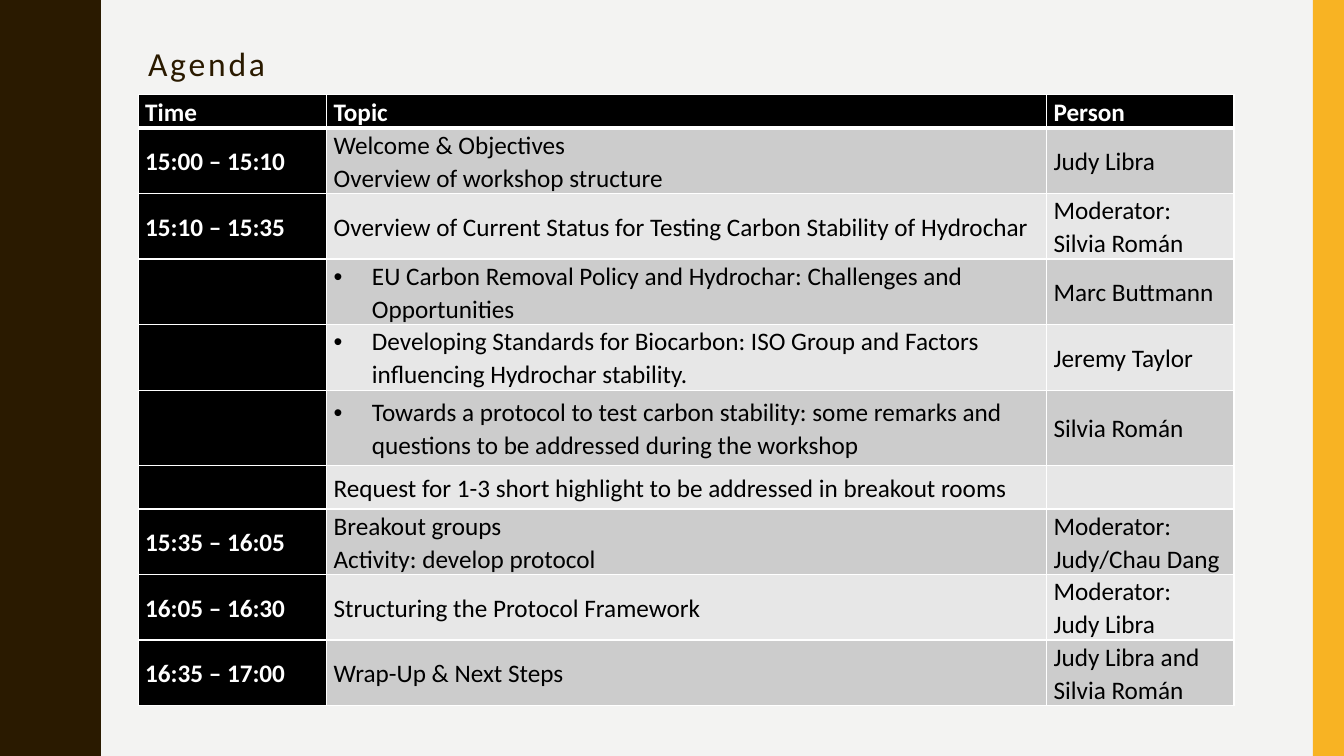
from dataclasses import dataclass

from lxml.etree import SubElement
from pptx import Presentation
from pptx.dml.color import RGBColor
from pptx.enum.shapes import MSO_SHAPE
from pptx.enum.text import MSO_ANCHOR
from pptx.oxml.ns import qn
from pptx.util import Inches, Pt

BROWN = RGBColor(0x2A, 0x1A, 0x00)
AMBER = RGBColor(0xF8, 0xB3, 0x23)
PAPER = RGBColor(0xF3, 0xF3, 0xF2)
BLACK = RGBColor(0x00, 0x00, 0x00)
WHITE = RGBColor(0xFF, 0xFF, 0xFF)
BANDS = (RGBColor(0xCC, 0xCC, 0xCC), RGBColor(0xE7, 0xE7, 0xE7))
FONT = "Calibri"
HEIGHT = 7.5
WAVE = 1.5  # length of one wave of the left edge
COLUMNS = (1.87, 7.14, 1.86)


@dataclass(frozen=True)
class AgendaRow:
    time: str
    topic: str
    person: str
    height: float = 0.65
    bullet: bool = False


AGENDA = (
    AgendaRow("Time", "Topic", "Person", 0.33),
    AgendaRow("15:00 – 15:10", "Welcome & Objectives\nOverview of workshop structure",
              "Judy Libra"),
    AgendaRow("15:10 – 15:35",
              "Overview of Current Status for Testing Carbon Stability of Hydrochar",
              "Moderator:\nSilvia Román"),
    AgendaRow("", "EU Carbon Removal Policy and Hydrochar: Challenges and Opportunities",
              "Marc Buttmann", bullet=True),
    AgendaRow("", "Developing Standards for Biocarbon: ISO Group and Factors "
              "influencing Hydrochar stability.", "Jeremy Taylor", bullet=True),
    AgendaRow("", "Towards a protocol to test carbon stability: some remarks and "
              "questions to be addressed during the workshop",
              "Silvia Román", 0.75, True),
    AgendaRow("", "Request for 1-3 short highlight to be addressed in breakout rooms",
              "", 0.43),
    AgendaRow("15:35 – 16:05", "Breakout groups\nActivity: develop protocol",
              "Moderator: Judy/Chau Dang"),
    AgendaRow("16:05 – 16:30", "Structuring the Protocol Framework",
              "Moderator:\nJudy Libra"),
    AgendaRow("16:35 – 17:00", "Wrap-Up & Next Steps", "Judy Libra and Silvia Román"),
)


def paint(sp, color: RGBColor) -> None:
    sp.shadow.inherit = False
    sp.fill.solid()
    sp.fill.fore_color.rgb = color
    sp.line.fill.background()


def add_wave(slide) -> None:
    rise = [(0.78, 0), (0.78, 0.07), (0.79, 0.14), (0.8, 0.2), (0.81, 0.25),
            (0.83, 0.29), (0.85, 0.33), (0.87, 0.38), (0.89, 0.42), (0.91, 0.46),
            (0.93, 0.5), (0.95, 0.55), (0.96, 0.61), (0.97, 0.68), (0.97, 0.75)]
    fall = [(x, WAVE - y) for x, y in reversed(rise[:-1])]
    edge = [(x, y + i * WAVE) for i in range(int(HEIGHT / WAVE)) for x, y in rise + fall]
    fb = slide.shapes.build_freeform(0, 0, scale=Inches(1))
    fb.add_line_segments(edge + [(0, HEIGHT)], close=True)
    paint(fb.convert_to_shape(), BROWN)


def add_run(p, text: str, size: float, color: RGBColor, bold: bool = False):
    r = p.add_run()
    r.text = text
    r.font.name = FONT
    r.font.size = Pt(size)
    r.font.bold = bold
    r.font.color.rgb = color
    return r


def add_title(slide, text: str) -> None:
    sp = slide.shapes.add_textbox(Inches(1.37), Inches(0.42), Inches(11.13), Inches(0.98))
    tf = sp.text_frame
    tf.word_wrap = True
    p = tf.paragraphs[0]
    p.line_spacing = 0.9
    r = add_run(p, text, 24, BROWN)
    r.font._element.set("spc", "200")


def add_bullet(p) -> None:
    pPr = p._p.get_or_add_pPr()
    pPr.set("marL", str(Inches(0.38)))
    pPr.set("indent", str(-Inches(0.38)))
    SubElement(pPr, qn("a:buFont"), typeface="Arial")
    SubElement(pPr, qn("a:buChar"), char="•")


def set_borders(cell, top: float, bottom: float) -> None:
    tcPr = cell._tc.get_or_add_tcPr()
    for side, width in (("L", 1), ("R", 1), ("T", top), ("B", bottom)):
        ln = SubElement(tcPr, qn(f"a:ln{side}"), w=str(Pt(width)))
        fill = SubElement(ln, qn("a:solidFill"))
        SubElement(fill, qn("a:srgbClr"), val=str(WHITE))


def fill_cell(cell, text: str, fill: RGBColor, bullet: bool) -> None:
    cell.fill.solid()
    cell.fill.fore_color.rgb = fill
    cell.vertical_anchor = MSO_ANCHOR.MIDDLE
    cell.margin_left = cell.margin_right = Inches(0.07)
    cell.margin_top = cell.margin_bottom = 0
    dark = fill == BLACK
    tf = cell.text_frame
    for i, line in enumerate(text.split("\n") if text else ()):
        p = tf.add_paragraph() if i else tf.paragraphs[0]
        p.line_spacing = 1.07
        if bullet:
            add_bullet(p)
        add_run(p, line, 18, WHITE if dark else BLACK, dark)


def add_agenda(slide) -> None:
    height = sum(row.height for row in AGENDA)
    table = slide.shapes.add_table(len(AGENDA), len(COLUMNS), Inches(1.37), Inches(0.94),
                                   Inches(sum(COLUMNS)), Inches(height)).table
    table.horz_banding = False
    for column, width in zip(table.columns, COLUMNS):
        column.width = Inches(width)
    for i, row in enumerate(AGENDA):
        table.rows[i].height = Inches(row.height)
        for j, text in enumerate((row.time, row.topic, row.person)):
            cell = table.cell(i, j)
            set_borders(cell, 3 if i == 1 else 1, 3 if i == 0 else 1)
            fill = BLACK if i == 0 or j == 0 else BANDS[(i - 1) % 2]
            fill_cell(cell, text, fill, row.bullet and j == 1)


def main() -> None:
    prs = Presentation()
    prs.slide_width, prs.slide_height = Inches(13.33), Inches(HEIGHT)
    slide = prs.slides.add_slide(prs.slide_layouts[6])

    # Background and side bands
    slide.background.fill.solid()
    slide.background.fill.fore_color.rgb = PAPER
    add_wave(slide)
    paint(slide.shapes.add_shape(MSO_SHAPE.RECTANGLE, Inches(13.02), 0,
                                 Inches(0.31), Inches(HEIGHT)), AMBER)

    # Title and timetable
    add_title(slide, "Agenda")
    add_agenda(slide)
    prs.save("out.pptx")


if __name__ == "__main__":
    main()
